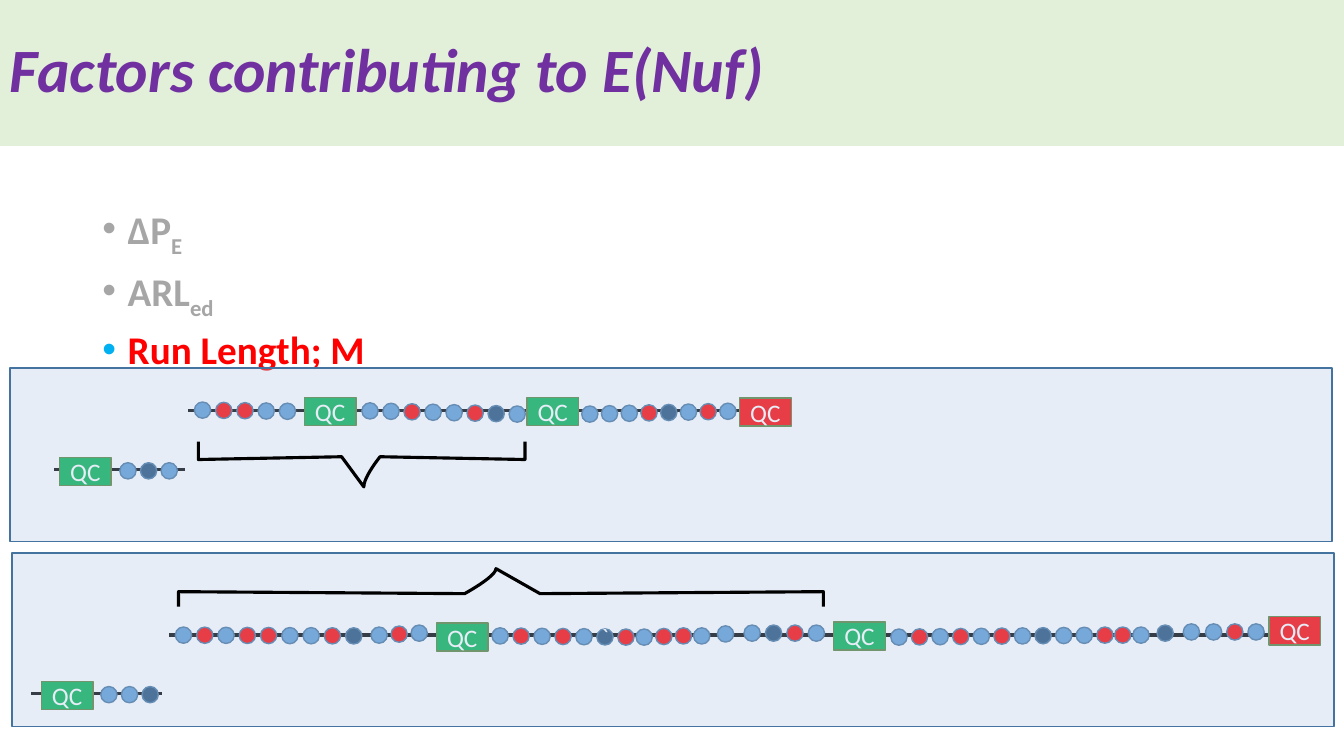
from dataclasses import dataclass

from lxml.etree import SubElement
from pptx import Presentation
from pptx.dml.color import RGBColor
from pptx.enum.shapes import MSO_CONNECTOR, MSO_SHAPE
from pptx.enum.text import MSO_ANCHOR, PP_ALIGN
from pptx.oxml.ns import qn
from pptx.shapes.autoshape import Shape
from pptx.slide import Slide
from pptx.text.text import Font
from pptx.util import Cm, Pt

Point = tuple[float, float]

FONT = "Calibri"
BLACK, WHITE, RED, GREEN = "000000", "FFFFFF", "FF0000", "00B050"
GREY, CYAN, PURPLE = "A6A6A6", "00B0F0", "7030A0"
BLUE_EDGE, GREEN_EDGE = "43739E", "538035"
BEAD_COLORS = {"b": "5B9BD5", "r": RED, "n": "1F4E79"}
BEAD_SIZE = 0.41
CURVE_STEPS = 12


@dataclass
class Thread:
    left: float
    right: float
    height: float


@dataclass
class BeadRun:
    colors: str
    first: Point
    last: Point


@dataclass
class Control:
    left: float
    top: float
    color: str = GREEN


@dataclass
class Bracket:
    before: list[Point]
    bend: Point
    tip: Point
    after: list[Point]


@dataclass
class Factor:
    name: str
    subscript: str
    color: str
    bullet_color: str


THREADS = [
    Thread(1.37, 4.67, 11.84),
    Thread(4.75, 19.53, 10.34),
    Thread(0.79, 4.09, 17.48),
    Thread(4.27, 32.26, 16),
]
BEAD_RUNS = [
    BeadRun("bnb", (3.02, 11.66), (4.06, 11.66)),
    BeadRun("brrbb", (4.9, 10.13), (7.04, 10.16)),
    BeadRun("bbrbbrnb", (9.12, 10.15), (12.83, 10.23)),
    BeadRun("bbbrnbrb", (14.66, 10.23), (18.14, 10.16)),
    BeadRun("bbn", (2.54, 17.3), (3.58, 17.3)),
    BeadRun("brbrrbbrn", (4.42, 15.8), (8.71, 15.82)),
    BeadRun("brb", (9.35, 15.8), (10.36, 15.75)),
    BeadRun("brbrbnr", (12.4, 15.82), (15.57, 15.85)),
    BeadRun("brr", (16.03, 15.85), (17.02, 15.82)),
    BeadRun("bb", (17.48, 15.82), (18.08, 15.77)),
    BeadRun("bnrb", (18.75, 15.75), (20.37, 15.75)),
    BeadRun("brbrbrbnbbr", (22.45, 15.85), (27.64, 15.8)),
    BeadRun("rb", (28.09, 15.8), (28.55, 15.8)),
    BeadRun("nb", (29.16, 15.75), (29.82, 15.72)),
    BeadRun("brb", (30.38, 15.72), (31.45, 15.72)),
]
TICKED_RUN, TICKED_BEAD = 7, 5
CONTROLS = [
    Control(1.5, 11.53),
    Control(7.67, 10.01),
    Control(13.28, 10.01),
    Control(18.64, 10.03, RED),
    Control(1.04, 17.17),
    Control(11, 15.7),
    Control(21.01, 15.67),
    Control(31.98, 15.54, RED),
]
PANELS = [(0.25, 9.27), (0.3, 13.94)]
BRACKETS = [
    Bracket([(13.23, 11.13), (13.23, 11.58), (9.58, 11.51)], (9.17, 12.01),
            (9.17, 12.27), [(8.61, 11.51), (5, 11.58), (5, 11.13)]),
    Bracket([(4.5, 15.29), (4.5, 14.91), (11.71, 14.96)], (12.5, 14.53),
            (12.5, 14.33), [(13.61, 14.96), (20.75, 14.91), (20.75, 15.29)]),
]
FACTORS = [
    Factor("∆P", "E", GREY, GREY),
    Factor("ARL", "ed", GREY, GREY),
    Factor("Run Length; M", "", RED, CYAN),
]


def rgb(color: str) -> RGBColor:
    return RGBColor.from_string(color)


def set_font(font: Font, size: float, color: str, bold: bool = False, italic: bool = False) -> None:
    font.name, font.size, font.bold, font.italic = FONT, Pt(size), bold, italic
    font.color.rgb = rgb(color)


def add_box(page: Slide, kind: MSO_SHAPE, left: float, top: float, width: float,
            height: float, fill: str, edge: str | None) -> Shape:
    box = page.shapes.add_shape(kind, Cm(left), Cm(top), Cm(width), Cm(height))
    box.shadow.inherit = False
    box.fill.solid()
    box.fill.fore_color.rgb = rgb(fill)
    if edge:
        box.line.color.rgb = rgb(edge)
        box.line.width = Pt(1)
    else:
        box.line.fill.background()
    return box


def add_label(box: Shape, text: str) -> None:
    box.text_frame.vertical_anchor = MSO_ANCHOR.MIDDLE
    para = box.text_frame.paragraphs[0]
    para.text = text
    para.alignment = PP_ALIGN.CENTER
    set_font(para.font, 18, WHITE)


def add_factors(page: Slide) -> None:
    box = page.shapes.add_textbox(Cm(2.33), Cm(5.07), Cm(29.21), Cm(12.09))
    frame = box.text_frame
    frame.word_wrap = True
    for index, factor in enumerate(FACTORS):
        para = frame.add_paragraph() if index else frame.paragraphs[0]
        para.line_spacing = 0.9
        para.space_before = Pt(10)
        set_font(para.font, 28, factor.color, bold=True)
        para.add_run().text = factor.name
        if factor.subscript:
            span = para.add_run()
            span.text = factor.subscript
            span._r.get_or_add_rPr().set("baseline", "-25000")
        properties = para._p.get_or_add_pPr()
        properties.set("marL", str(Cm(0.64)))
        properties.set("indent", str(-Cm(0.64)))
        bullet_color = properties.makeelement(qn("a:buClr"), {})
        SubElement(bullet_color, qn("a:srgbClr"), val=factor.bullet_color)
        bullet_font = properties.makeelement(qn("a:buFont"), {"typeface": "Arial"})
        bullet = properties.makeelement(qn("a:buChar"), {"char": "•"})
        defaults = properties.find(qn("a:defRPr"))
        for element in (bullet_color, bullet_font, bullet):
            defaults.addprevious(element)


def add_thread(page: Slide, thread: Thread) -> None:
    line = page.shapes.add_connector(MSO_CONNECTOR.STRAIGHT, Cm(thread.left), Cm(thread.height),
                                     Cm(thread.right), Cm(thread.height))
    line.line.color.rgb = rgb(BLACK)
    line.line.width = Pt(2.25)
    SubElement(line._element.spPr, qn("a:effectLst"))


def add_beads(page: Slide, run: BeadRun) -> list[Shape]:
    beads = []
    for index, letter in enumerate(run.colors):
        share = index / (len(run.colors) - 1)
        left, top = (a + (b - a) * share for a, b in zip(run.first, run.last))
        beads.append(add_box(page, MSO_SHAPE.OVAL, left, top, BEAD_SIZE, BEAD_SIZE,
                             BEAD_COLORS[letter], BLUE_EDGE))
    return beads


def add_bracket(page: Slide, bracket: Bracket) -> None:
    curve = []
    for step in range(1, CURVE_STEPS + 1):
        t = step / CURVE_STEPS
        weights = ((1 - t) ** 2 * (1 + 2 * t), 3 * (1 - t) * t ** 2, t ** 3)
        corners = zip(bracket.before[-1], bracket.bend, bracket.tip)
        curve.append(tuple(sum(w * c for w, c in zip(weights, corner)) for corner in corners))
    start, *rest = [(Cm(x), Cm(y)) for x, y in bracket.before + curve + bracket.after]
    builder = page.shapes.build_freeform(*start)
    builder.add_line_segments(rest, close=False)
    outline = builder.convert_to_shape()
    outline.shadow.inherit = False
    outline.fill.background()
    outline.line.color.rgb = rgb(BLACK)
    outline.line.width = Pt(2.25)


def main() -> None:
    deck = Presentation()
    deck.slide_width, deck.slide_height = Cm(33.87), Cm(19.05)
    page = deck.slides.add_slide(deck.slide_layouts[6])
    add_factors(page)
    for thread in THREADS:
        add_thread(page, thread)
    bead_rows = [add_beads(page, run) for run in BEAD_RUNS]
    add_label(bead_rows[TICKED_RUN][TICKED_BEAD], "`")
    for control in CONTROLS:
        add_label(add_box(page, MSO_SHAPE.FLOWCHART_PROCESS, control.left, control.top, 1.3, 0.71,
                          control.color, GREEN_EDGE), "QC")
    title = add_box(page, MSO_SHAPE.RECTANGLE, 0, 0, 33.87, 3.68, "E2F0D9", None)
    title.text_frame.vertical_anchor = MSO_ANCHOR.MIDDLE
    para = title.text_frame.paragraphs[0]
    para.text = "Factors contributing to E(Nuf)"
    para.alignment = PP_ALIGN.LEFT
    para.line_spacing = 0.9
    set_font(para.font, 44, PURPLE, bold=True, italic=True)
    for left, top in PANELS:
        panel = add_box(page, MSO_SHAPE.RECTANGLE, left, top, 33.32, 4.37, "B4C7E7", BLUE_EDGE)
        tint = panel._element.spPr.find(qn("a:solidFill")).find(qn("a:srgbClr"))
        SubElement(tint, qn("a:alpha"), val="31000")
    for bracket in BRACKETS:
        add_bracket(page, bracket)
    deck.save("out.pptx")


if __name__ == "__main__":
    main()
